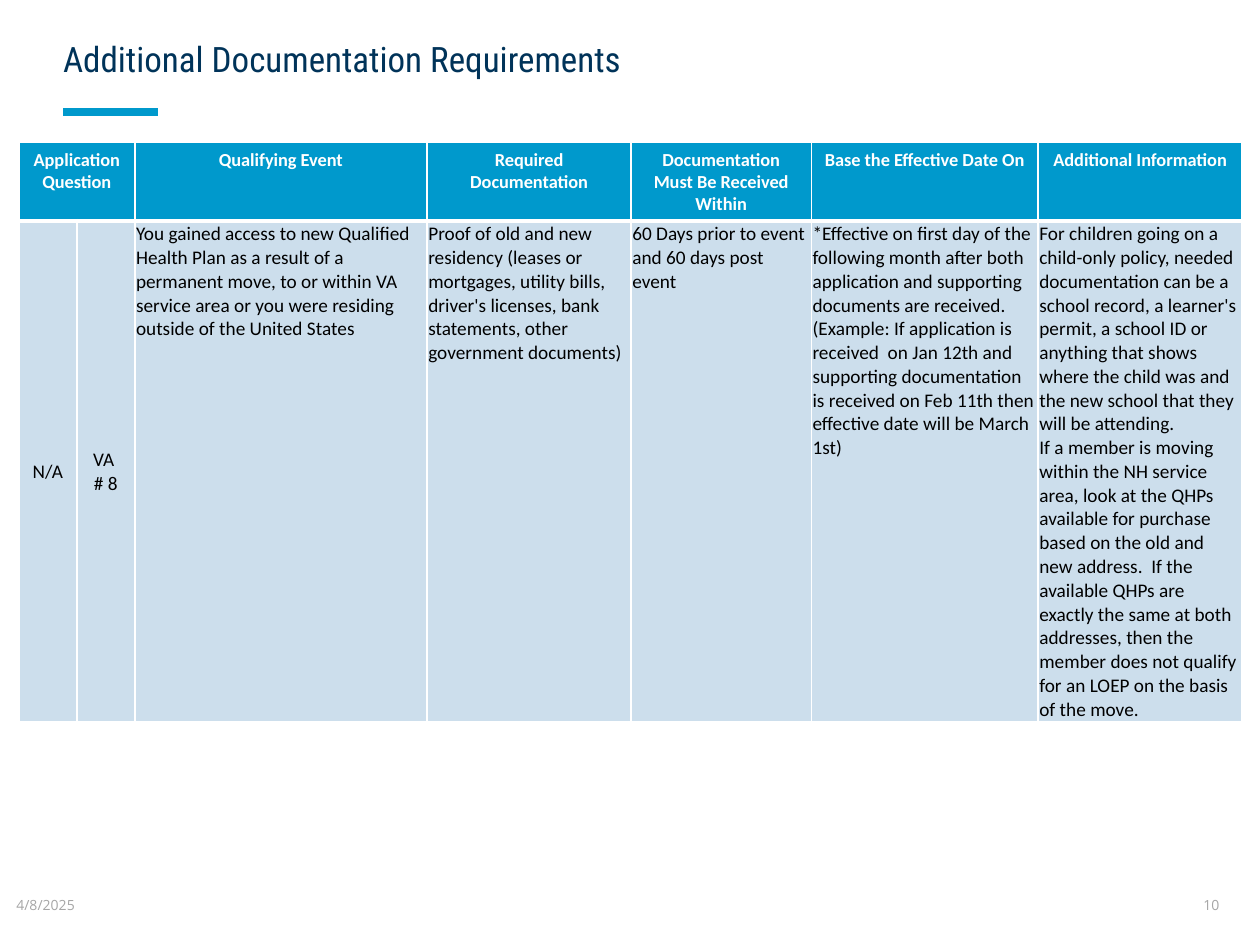
from lxml.etree import SubElement
from pptx import Presentation
from pptx.dml.color import RGBColor
from pptx.enum.text import MSO_ANCHOR as Anchor, PP_ALIGN as Align
from pptx.oxml.ns import qn
from pptx.util import Inches, Pt

COLORS = {"navy": "003359", "blue": "0099CC", "pale": "CCDEEC",
          "white": "FFFFFF", "black": "000000", "gray": "A6A6A6"}

TITLE = "Additional Documentation Requirements"
DATE, PAGE = "4/8/2025", "10"

# Heading, column width, body paragraphs; an empty heading joins the one before
COLUMNS = [
    ("Application Question", 0.46, ["N/A"]),
    ("", 0.46, ["VA ", "# 8"]),
    ("Qualifying Event", 2.32, [
        "You gained access to new Qualified Health Plan as a result of a "
        "permanent move, to or within VA service area or you were residing "
        "outside of the United States"]),
    ("Required Documentation", 1.62, [
        "Proof of old and new residency (leases or mortgages, utility bills, "
        "driver's licenses, bank statements, other government documents)"]),
    ("Documentation Must Be Received Within", 1.43, [
        "60 Days prior to event and 60 days post event"]),
    ("Base the Effective Date On", 1.8, [
        "*Effective on first day of the following month after both "
        "application and supporting documents are received.  (Example: If "
        "application is received  on Jan 12th and supporting documentation "
        "is received on Feb 11th then effective date will be March 1st)"]),
    ("Additional Information", 1.62, [
        "For children going on a child-only policy, needed documentation can "
        "be a school record, a learner's permit, a school ID or anything that "
        "shows where the child was and the new school that they will be "
        "attending.",
        "If a member is moving within the NH service area, look at the QHPs "
        "available for purchase based on the old and new address.  If the "
        "available QHPs are exactly the same at both addresses, then the "
        "member does not qualify for an LOEP on the basis of the move."]),
]
ROWS = [0.62, 3.97]
TIGHT = (0.01, 0.01, 0.01, 0)


def rgb(name):
    return RGBColor.from_string(COLORS[name])


def write(frame, paras, font="Calibri", size=11, color="black", bold=False,
          align=Align.LEFT, space=1):
    for i, text in enumerate(paras):
        para = frame.paragraphs[0] if i == 0 else frame.add_paragraph()
        para.alignment = align
        para.line_spacing = space
        run = para.add_run()
        run.text = text
        run.font.name, run.font.size, run.font.bold = font, Pt(size), bold
        run.font.color.rgb = rgb(color)


def inset(target, sides):
    """Set left, top, right and bottom margins of a cell or text frame."""
    for side, gap in zip(("left", "top", "right", "bottom"), sides):
        setattr(target, f"margin_{side}", Inches(gap))


def label(slide, text, place, pad, wrap=True, **style):
    frame = slide.shapes.add_textbox(*map(Inches, place)).text_frame
    frame.word_wrap = wrap
    frame.vertical_anchor = Anchor.MIDDLE
    inset(frame, pad)
    write(frame, [text], **style)


def paint(cell, fill, base=1):
    """Draw white borders and the fill of a cell; base is the bottom width."""
    props = cell._tc.get_or_add_tcPr()
    for tag, width in (("lnL", 1), ("lnR", 1), ("lnT", 1), ("lnB", base)):
        line = SubElement(props, qn(f"a:{tag}"), w=str(Pt(width)))
        solid = SubElement(line, qn("a:solidFill"))
        SubElement(solid, qn("a:srgbClr"), val=COLORS["white"])
    cell.fill.solid()
    cell.fill.fore_color.rgb = rgb(fill)


def add_rule(slide):
    rule = slide.shapes.add_connector(1, *map(Inches, (0.5, 0.89, 1.25, 0.89)))
    rule.line.color.rgb = rgb("blue")
    rule.line.width = Pt(4.5)
    SubElement(rule._element.spPr, qn("a:effectLst"))


def add_grid(slide):
    wide = sum(width for _, width, _ in COLUMNS)
    grid = slide.shapes.add_table(
        len(ROWS), len(COLUMNS), *map(Inches, (0.15, 1.13, wide, sum(ROWS)))).table
    for row, height in zip(grid.rows, ROWS):
        row.height = Inches(height)
    for i, (head, width, body) in enumerate(COLUMNS):
        grid.columns[i].width = Inches(width)
        top, cell = grid.cell(0, i), grid.cell(1, i)
        paint(top, "blue", base=3)
        paint(cell, "pale")
        if head:
            write(top.text_frame, [head], size=10.5, color="white", bold=True,
                  align=Align.CENTER)
        else:
            grid.cell(0, i - 1).merge(top)
        inset(cell, TIGHT)
        short = i < 2
        cell.vertical_anchor = Anchor.MIDDLE if short else Anchor.TOP
        write(cell.text_frame, body, align=Align.CENTER if short else Align.LEFT)


def main():
    deck = Presentation()
    deck.slide_width, deck.slide_height = Inches(10), Inches(7.5)
    slide = deck.slides.add_slide(deck.slide_layouts[6])
    add_rule(slide)
    label(slide, TITLE, (0.5, 0, 6.75, 0.87), (0, 0.3, 0, 0.2),
          font="Roboto Condensed", size=20, color="navy", space=0.9)
    foot = dict(pad=(0, 0.05, 0, 0.05), font="Open Sans", size=8, color="gray")
    label(slide, DATE, (0.13, 6.98, 0.73, 0.4), wrap=False, **foot)
    label(slide, PAGE, (9.55, 6.98, 0.27, 0.4), **foot)
    add_grid(slide)
    deck.save("out.pptx")


if __name__ == "__main__":
    main()
